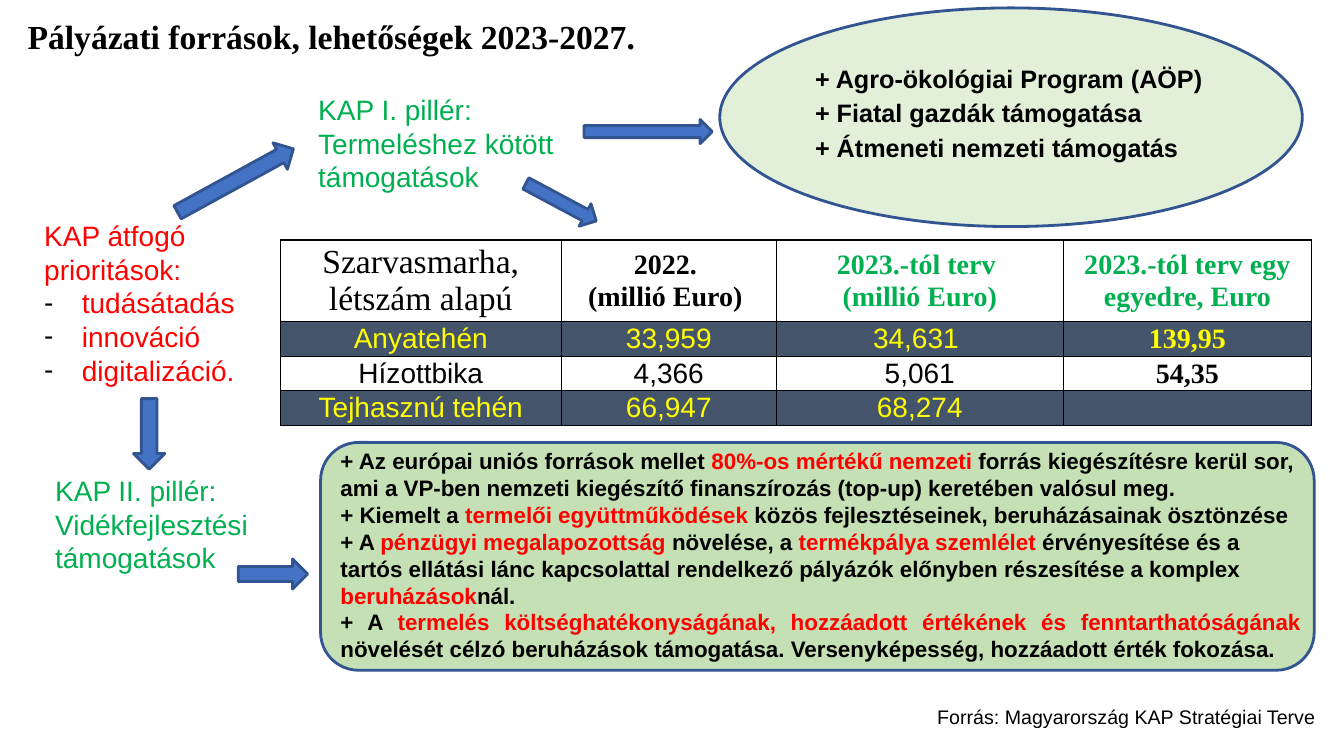
import dataclasses
import typing

import lxml.etree
import pptx
import pptx.dml.color
import pptx.enum.shapes
import pptx.enum.text
import pptx.oxml.ns
import pptx.util

Cm = pptx.util.Cm
Pt = pptx.util.Pt
Preset = pptx.enum.shapes.MSO_SHAPE
Align = pptx.enum.text.PP_ALIGN
Anchor = pptx.enum.text.MSO_ANCHOR
qn = pptx.oxml.ns.qn


@dataclasses.dataclass(frozen=True)
class Theme:
    sans: str = "Arial"
    serif: str = "Times New Roman"
    black: str = "000000"
    red: str = "FF0000"
    green: str = "00B050"
    yellow: str = "FFFF00"
    slate: str = "44546A"
    blue: str = "4472C4"
    outline: str = "325491"
    pale_green: str = "E2F0D9"
    soft_green: str = "C5E0B4"
    title_size: int = 24
    heading_size: int = 20
    programme_size: int = 18
    detail_size: int = 16
    source_size: int = 14


THEME = Theme()


class Box(typing.NamedTuple):
    left: float
    top: float
    width: float
    height: float

    def lengths(self) -> list:
        return [Cm(value) for value in self]


class Figure(typing.NamedTuple):
    preset: typing.Any
    box: Box
    fill: str = THEME.blue
    rotation: float = 0


class Style(typing.NamedTuple):
    size: int
    color: str = THEME.black
    bold: bool = False
    name: str = THEME.sans


class Label(typing.NamedTuple):
    box: Box
    style: Style
    paragraphs: list
    space_after: float = 0
    wrap: bool = True


# Content
FIGURES = [
    Figure(Preset.ROUNDED_RECTANGLE, Box(8.08, 11.15, 25.04, 5.74), THEME.soft_green),
    Figure(Preset.OVAL, Box(18.14, 0.2, 14.68, 5.51), THEME.pale_green),
    Figure(Preset.DOWN_ARROW, Box(16.03, 1.7, 0.61, 3.23), rotation=270),
    Figure(Preset.DOWN_ARROW, Box(6.5, 13.59, 0.76, 1.75), rotation=270),
    Figure(Preset.DOWN_ARROW, Box(13.82, 4.09, 0.64, 2.01), rotation=298.1),
    Figure(Preset.RIGHT_ARROW, Box(4.27, 4.17, 3.33, 0.76), rotation=331.3),
    Figure(Preset.RIGHT_ARROW, Box(2.87, 10.54, 1.78, 0.79), rotation=90),
]

PILLAR = Style(THEME.heading_size, THEME.green)
LABELS = [
    Label(Box(20.29, 1.47, 13.3, 3.48), Style(THEME.programme_size, bold=True),
          ["+ Agro-ökológiai Program (AÖP)", "+ Fiatal gazdák támogatása",
           "+ Átmeneti nemzeti támogatás"], space_after=3),
    Label(Box(7.77, 2.21, 8.56, 2.82), PILLAR,
          ["KAP I. pillér: Termeléshez kötött támogatások"]),
    Label(Box(1.14, 11.81, 7.19, 2.82), PILLAR,
          ["KAP II. pillér: Vidékfejlesztési támogatások"]),
    Label(Box(23.37, 17.65, 10.16, 0.86), Style(THEME.source_size),
          ["Forrás: Magyarország KAP Stratégiai Terve"], wrap=False),
]

# Runs alternate between plain and highlighted text
DETAILS_BOX = Box(8.33, 11.15, 24.71, 6.93)
DETAILS = [
    ["+ Az európai uniós források mellet ", "80%-os mértékű nemzeti ",
     "forrás kiegészítésre kerül sor, ami a VP-ben nemzeti kiegészítő finanszírozás "
     "(top-up) keretében valósul meg."],
    ["+ Kiemelt a ", "termelői együttműködések ",
     "közös fejlesztéseinek, beruházásainak ösztönzése"],
    ["+ A ", "pénzügyi megalapozottság ", "növelése, a ", "termékpálya szemlélet ",
     "érvényesítése és a tartós ellátási lánc kapcsolattal rendelkező pályázók "
     "előnyben részesítése a komplex ", "beruházások", "nál."],
    ["+ A ", "termelés költséghatékonyságának, hozzáadott értékének és fenntarthatóságának ",
     "növelését célzó beruházások támogatása. Versenyképesség, hozzáadott érték fokozása. "],
]

PRIORITIES_BOX = Box(0.86, 5.38, 6.91, 4.52)
PRIORITIES = ["KAP átfogó prioritások:", "tudásátadás", "innováció", "digitalizáció."]

TABLE_ORIGIN = (7.06, 6.05)
COLUMN_WIDTHS = [7.09, 5.41, 7.24, 6.25]
ROW_HEIGHTS = [2.06, 0.87, 0.87, 0.87]
ROWS = [
    ["Szarvasmarha, létszám alapú", "2022. \n(millió Euro) ",
     "2023.-tól terv \n(millió Euro)", "2023.-tól terv egy egyedre, Euro"],
    ["Anyatehén", "33,959", "34,631 ", "139,95"],
    ["Hízottbika", "4,366", "5,061", "54,35"],
    ["Tejhasznú tehén", "66,947", "68,274", ""],
]


# Helpers
def rgb(color: str) -> pptx.dml.color.RGBColor:
    return pptx.dml.color.RGBColor.from_string(color)


def apply_format(target: typing.Any, values: dict) -> None:
    for name, value in values.items():
        setattr(target, name, value)


def apply_style(font: typing.Any, style: Style) -> None:
    apply_format(font, {"size": Pt(style.size), "bold": style.bold, "name": style.name})
    font.color.rgb = rgb(style.color)


def place(shape: typing.Any, box: Box) -> None:
    apply_format(shape, dict(zip(("left", "top", "width", "height"), box.lengths())))


def write_runs(paragraph: typing.Any, pieces: list, style: Style) -> None:
    for index, piece in enumerate(pieces):
        run = paragraph.add_run()
        run.text = piece
        apply_style(run.font, style._replace(color=THEME.red) if index % 2 else style)


def next_paragraph(frame: typing.Any, index: int) -> typing.Any:
    return frame.add_paragraph() if index else frame.paragraphs[0]


def add_text_box(slide: typing.Any, box: Box, wrap: bool = True) -> typing.Any:
    frame = slide.shapes.add_textbox(*box.lengths()).text_frame
    frame.word_wrap = wrap
    return frame


# Parts of the slide
def fill_title(slide: typing.Any) -> None:
    title = slide.shapes.title
    place(title, Box(0.36, 0.38, 15.98, 1.17))
    apply_format(title.text_frame, {"word_wrap": False, "vertical_anchor": Anchor.MIDDLE})
    paragraph = title.text_frame.paragraphs[0]
    apply_format(paragraph, {"alignment": Align.CENTER, "line_spacing": 0.9})
    write_runs(paragraph, ["Pályázati források, lehetőségek 2023-2027."],
               Style(THEME.title_size, bold=True, name=THEME.serif))


def fill_priorities(slide: typing.Any) -> None:
    body = slide.placeholders[1]
    place(body, PRIORITIES_BOX)
    body.text_frame.auto_size = pptx.enum.text.MSO_AUTO_SIZE.NONE
    for index, text in enumerate(PRIORITIES):
        paragraph = next_paragraph(body.text_frame, index)
        properties = paragraph._p.get_or_add_pPr()
        indent = Cm(0.95) if index else 0
        properties.set("marL", str(indent))
        properties.set("indent", str(-indent))
        if index:
            color = lxml.etree.SubElement(properties, qn("a:buClr"))
            lxml.etree.SubElement(color, qn("a:srgbClr"), val=THEME.black)
            lxml.etree.SubElement(properties, qn("a:buChar"), char="-")
        else:
            lxml.etree.SubElement(properties, qn("a:buNone"))
        paragraph.space_before = Pt(0)
        write_runs(paragraph, [text], Style(THEME.heading_size, THEME.red))


def add_figure(slide: typing.Any, figure: Figure) -> None:
    shape = slide.shapes.add_shape(figure.preset, *figure.box.lengths())
    shape.rotation = figure.rotation
    shape.shadow.inherit = False
    shape.fill.solid()
    shape.fill.fore_color.rgb = rgb(figure.fill)
    shape.line.color.rgb = rgb(THEME.outline)
    shape.line.width = Pt(2)


def add_label(slide: typing.Any, label: Label) -> None:
    frame = add_text_box(slide, label.box, label.wrap)
    for index, text in enumerate(label.paragraphs):
        paragraph = next_paragraph(frame, index)
        paragraph.space_after = Pt(label.space_after)
        write_runs(paragraph, [text], label.style)


def add_details(slide: typing.Any) -> None:
    frame = add_text_box(slide, DETAILS_BOX)
    for index, pieces in enumerate(DETAILS):
        write_runs(next_paragraph(frame, index), pieces, Style(THEME.detail_size, bold=True))
    frame.paragraphs[-1].alignment = Align.JUSTIFY


def cell_style(row: int, column: int) -> Style:
    if row == 0:
        size = THEME.heading_size if column else THEME.title_size
        color = THEME.green if column > 1 else THEME.black
        return Style(size, color, column > 0, THEME.serif)
    last = column == len(COLUMN_WIDTHS) - 1
    return Style(THEME.heading_size, THEME.yellow if row % 2 else THEME.black,
                 last, THEME.serif if last else THEME.sans)


def add_borders(cell: typing.Any) -> None:
    properties = cell._tc.get_or_add_tcPr()
    for index, side in enumerate(("a:lnL", "a:lnR", "a:lnT", "a:lnB")):
        line = lxml.etree.Element(qn(side), w=str(Pt(1)))
        fill = lxml.etree.SubElement(line, qn("a:solidFill"))
        lxml.etree.SubElement(fill, qn("a:srgbClr"), val=THEME.black)
        properties.insert(index, line)


def add_support_table(slide: typing.Any) -> None:
    box = Box(*TABLE_ORIGIN, sum(COLUMN_WIDTHS), sum(ROW_HEIGHTS))
    table = slide.shapes.add_table(len(ROWS), len(COLUMN_WIDTHS), *box.lengths()).table
    apply_format(table, {"first_row": False, "horz_banding": False})
    for column, width in zip(table.columns, COLUMN_WIDTHS):
        column.width = Cm(width)
    for row_index, texts in enumerate(ROWS):
        table.rows[row_index].height = Cm(ROW_HEIGHTS[row_index])
        for column_index, text in enumerate(texts):
            cell = table.cell(row_index, column_index)
            apply_format(cell, {"margin_left": Cm(0.13), "margin_right": Cm(0.13),
                                "margin_top": 0, "margin_bottom": 0,
                                "vertical_anchor": Anchor.MIDDLE})
            if row_index % 2:
                cell.fill.solid()
                cell.fill.fore_color.rgb = rgb(THEME.slate)
            else:
                cell.fill.background()
            add_borders(cell)
            for index, line in enumerate(text.split("\n") if text else []):
                paragraph = next_paragraph(cell.text_frame, index)
                paragraph.alignment = Align.CENTER
                style = cell_style(row_index, column_index)
                write_runs(paragraph, [line], style)


def main() -> None:
    presentation = pptx.Presentation()
    apply_format(presentation, {"slide_width": Cm(33.87), "slide_height": Cm(19.05)})
    slide = presentation.slides.add_slide(presentation.slide_layouts[1])
    fill_title(slide)
    fill_priorities(slide)
    for figure in FIGURES:
        add_figure(slide, figure)
    add_support_table(slide)
    for label in LABELS:
        add_label(slide, label)
    add_details(slide)
    presentation.save("out.pptx")


if __name__ == "__main__":
    main()
